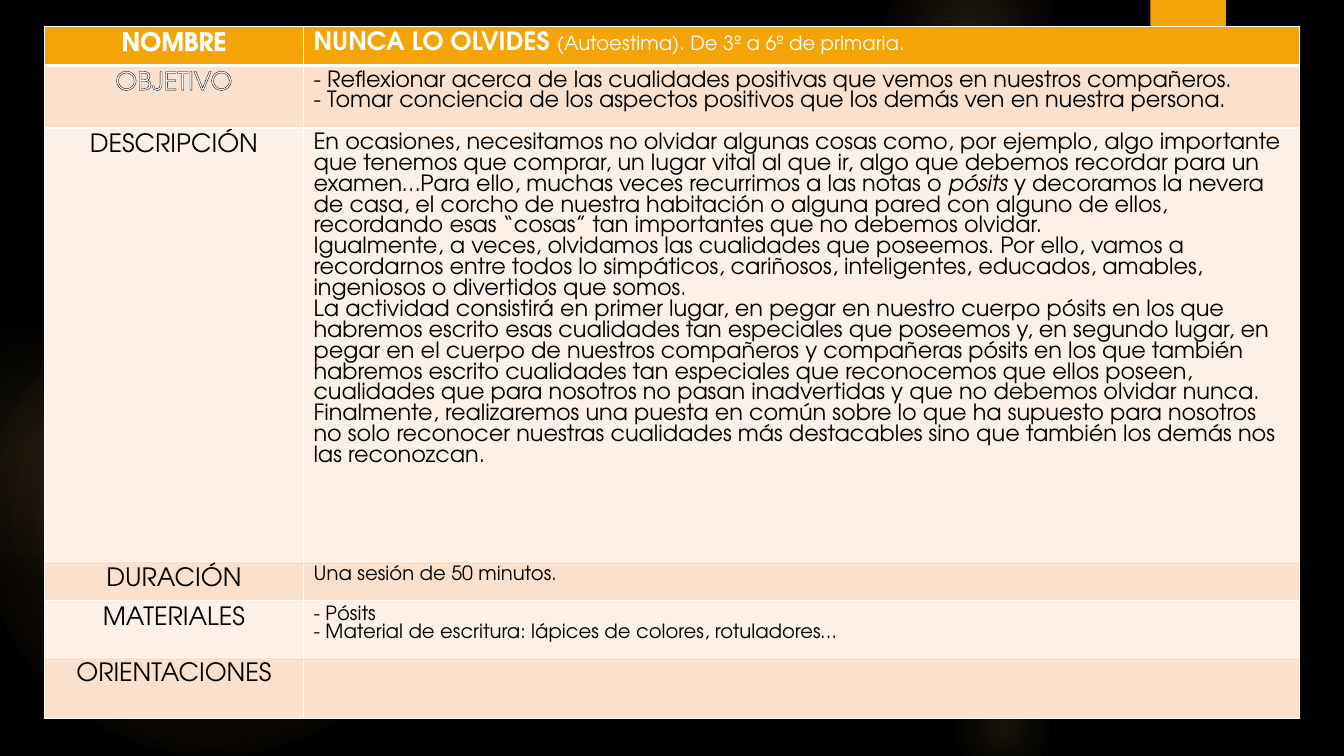
from pptx import Presentation
from pptx.dml.color import RGBColor
from pptx.enum.shapes import MSO_SHAPE
from pptx.enum.text import PP_ALIGN
from pptx.oxml import parse_xml
from pptx.oxml.ns import nsdecls
from pptx.util import Inches, Pt

FONT = "TeX Gyre Adventor"
WHITE, BLACK, GOLD = "FFFFFF", "000000", "F5A408"
BANDS = ["FDF0E7", "FBE0CC"]
LEAD = {18: 17.5, 16: 14.9, 14: 13}
COLS = [2.57, 9.88]
ROWS = [
    ("NOMBRE", 0.39, 18, [[("NUNCA LO OLVIDES ", "b"),
                           ("(Autoestima). De 3º a 6º de primaria.", "s")]]),
    ("OBJETIVO", 0.62, 16, [
        [("- Reflexionar acerca de las cualidades positivas que vemos en nuestros compañeros.", "")],
        [("- Tomar conciencia de los aspectos positivos que los demás ven en nuestra persona.", "")]]),
    ("DESCRIPCIÓN", 4.3, 16, [
        [("En ocasiones, necesitamos no olvidar algunas cosas como, por ejemplo, algo importante "
          "que tenemos que comprar, un lugar vital al que ir, algo que debemos recordar para un "
          "examen…Para ello, muchas veces recurrimos a las notas o ", ""),
         ("pósits ", "i"),
         ("y decoramos la nevera de casa, el corcho de nuestra habitación o alguna pared con "
          "alguno de ellos, recordando esas “cosas” tan importantes que no debemos olvidar.", "")],
        [("Igualmente, a veces, olvidamos las cualidades que poseemos. Por ello, vamos a "
          "recordarnos entre todos lo simpáticos, cariñosos, inteligentes, educados, amables, "
          "ingeniosos o divertidos que somos.", "")],
        [("La actividad consistirá en primer lugar, en pegar en nuestro cuerpo pósits en los que "
          "habremos escrito esas cualidades tan especiales que poseemos y, en segundo lugar, en "
          "pegar en el cuerpo de nuestros compañeros y compañeras pósits en los que también "
          "habremos escrito cualidades tan especiales que reconocemos que ellos poseen, "
          "cualidades que para nosotros no pasan inadvertidas y que no debemos olvidar nunca.", "")],
        [("Finalmente, realizaremos una puesta en común sobre lo que ha supuesto para nosotros "
          "no solo reconocer nuestras cualidades más destacables sino que también los demás nos "
          "las reconozcan.", "")]]),
    ("DURACIÓN", 0.39, 14, [[("Una sesión de 50 minutos.", "")]]),
    ("MATERIALES", 0.56, 14, [
        [("- Pósits", "")],
        [("- Material de escritura: lápices de colores, rotuladores…", "")]]),
    ("ORIENTACIONES", 0.61, 14, []),
]
GLOWS = [
    (-0.17, 2.92, 4.58, [(0, "FAC96A", 11), (36, "FAC96A", 10), (75, "FAC96A", 0)]),
    (-0.92, 3.17, 2.58, [(0, "FAC96A", 8), (36, "FAC96A", 5), (71, "F59B74", 0)]),
    (8.75, -0.5, 1.75, [(0, "FAC96A", 14), (36, "FAC96A", 7), (73, "FAC96A", 0)]),
    (9.41, 6.67, 1.08, [(0, "FAC96A", 10), (31, "FAC96A", 5), (66, "FAC96A", 0)]),
]


def paint(fill, color):
    fill.solid()
    fill.fore_color.rgb = RGBColor.from_string(color)


def add_form(slide, kind, x, y, w, h):
    form = slide.shapes.add_shape(kind, Inches(x), Inches(y), Inches(w), Inches(h))
    form.shadow.inherit = False
    form.line.fill.background()
    return form


def add_glow(slide, x, y, size, stops):
    form = add_form(slide, MSO_SHAPE.OVAL, x, y, size, size)
    marks = "".join(
        f'<a:gs pos="{pos * 1000}"><a:srgbClr val="{color}">'
        f'<a:alpha val="{alpha * 1000}"/></a:srgbClr></a:gs>'
        for pos, color, alpha in stops)
    form.fill.background()
    old = form.element.spPr.find(".//{*}noFill")
    old.getparent().replace(old, parse_xml(
        f'<a:gradFill {nsdecls("a")}><a:gsLst>{marks}</a:gsLst><a:path path="circle">'
        '<a:fillToRect l="50000" t="50000" r="50000" b="50000"/></a:path></a:gradFill>'))


def line_xml(tag, width, color):
    return parse_xml(
        f'<a:{tag} {nsdecls("a")} w="{int(width * 12700)}"><a:solidFill>'
        f'<a:srgbClr val="{color}"/></a:solidFill></a:{tag}>')


def set_run(run, size, color, bold=False, italic=False):
    font = run.font
    font.name, font.size = FONT, Pt(size)
    font.bold, font.italic = bold, italic
    font.color.rgb = RGBColor.from_string(color)


def set_cell(cell, row, color):
    paint(cell.fill, color)
    widths = {"lnL": 1, "lnR": 1, "lnT": 3 if row == 1 else 1, "lnB": 3 if row == 0 else 1}
    props = cell._tc.get_or_add_tcPr()
    for spot, (tag, width) in enumerate(widths.items()):
        props.insert(spot, line_xml(tag, width, WHITE))


def set_label(cell, text, row):
    cell.text_frame.text = text
    para = cell.text_frame.paragraphs[0]
    para.alignment = PP_ALIGN.CENTER
    para.line_spacing = Pt(LEAD[18])
    run = para.runs[0]
    set_run(run, 18, WHITE if row < 2 else BLACK, bold=row == 0)
    edge = BLACK if row else WHITE
    run.font._element.insert(0, line_xml("ln", 0.75, edge))


def set_body(cell, paras, size, color):
    frame = cell.text_frame
    frame.paragraphs[0].font.size = Pt(size)
    for num, parts in enumerate(paras):
        para = frame.add_paragraph() if num else frame.paragraphs[0]
        para.line_spacing = Pt(LEAD[size])
        for text, style in parts:
            run = para.add_run()
            run.text = text
            set_run(run, 14 if style == "s" else size, color, style == "b", style == "i")


def main():
    deck = Presentation()
    deck.slide_width, deck.slide_height = Inches(13.33), Inches(7.5)
    slide = deck.slides.add_slide(deck.slide_layouts[6])
    paint(slide.background.fill, BLACK)
    for glow in GLOWS:
        add_glow(slide, *glow)
    paint(add_form(slide, MSO_SHAPE.RECTANGLE, 11.41, 0, 0.75, 1.25).fill, GOLD)

    high = sum(row[1] for row in ROWS)
    table = slide.shapes.add_table(len(ROWS), len(COLS), Inches(0.44), Inches(0.26),
                                   Inches(sum(COLS)), Inches(high)).table
    for col, width in zip(table.columns, COLS):
        col.width = Inches(width)
    for row, (label, height, size, paras) in enumerate(ROWS):
        table.rows[row].height = Inches(height)
        left, right = table.cell(row, 0), table.cell(row, 1)
        for cell in (left, right):
            set_cell(cell, row, BANDS[row % 2] if row else GOLD)
        set_label(left, label, row)
        set_body(right, paras, size, BLACK if row else WHITE)
    deck.save("out.pptx")


if __name__ == "__main__":
    main()
